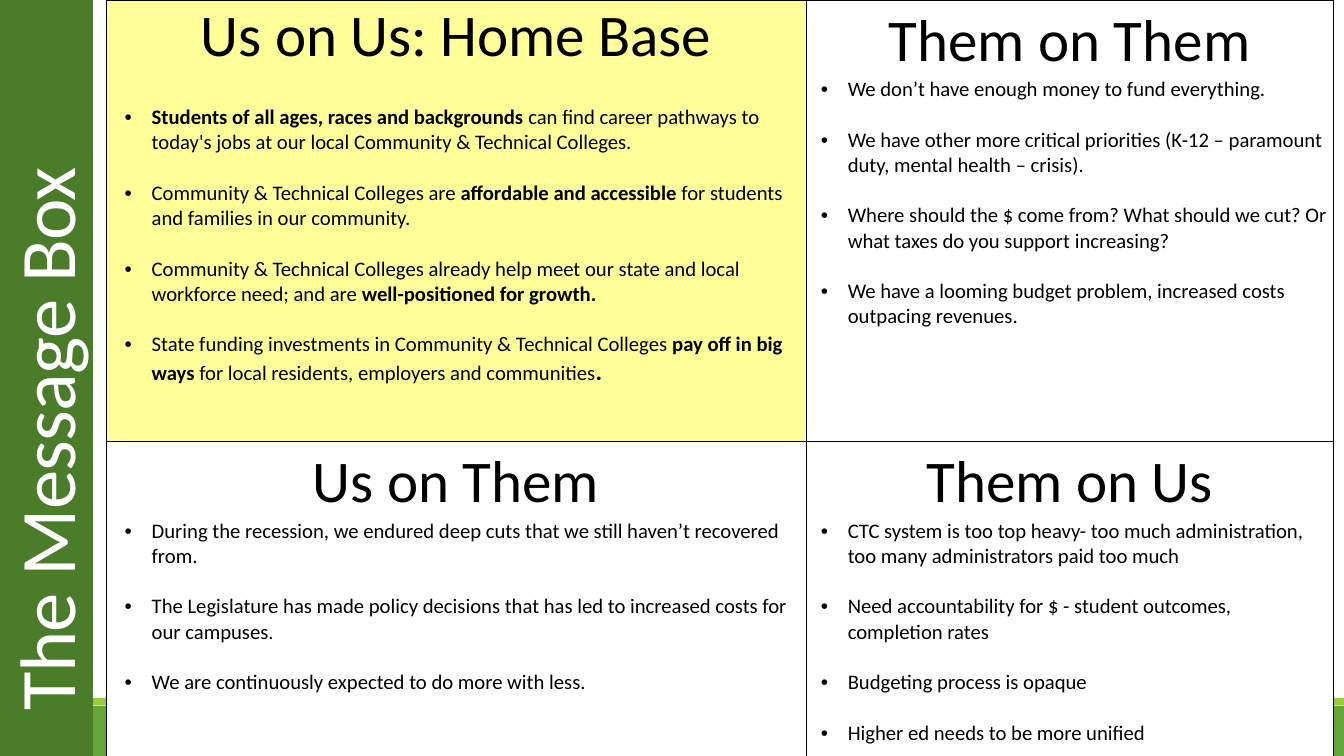
"""Build the Message Box slide."""
from dataclasses import dataclass

from lxml.etree import SubElement
from pptx import Presentation
from pptx.dml.color import RGBColor
from pptx.enum.shapes import MSO_SHAPE
from pptx.enum.text import MSO_ANCHOR, PP_ALIGN
from pptx.oxml import parse_xml
from pptx.oxml.ns import qn
from pptx.util import Inches, Pt

WIDE, HIGH = 18.96, 10.67
FONT = "Calibri"
BLACK, WHITE = "000000", "FFFFFF"
COLS, ROWS = (9.87, 7.44), (6.23, 4.44)
MARGINS = (0.56, 0.51)
SPACE = "http://schemas.openxmlformats.org/drawingml/2006/main"


@dataclass
class Bar:
    """A plain filled strip."""
    left: float
    top: float
    width: float
    height: float
    color: str


@dataclass
class Part:
    """A piece of text in one style."""
    text: str
    bold: bool = False
    size: float = 21


@dataclass
class Panel:
    """One cell of the message box."""
    title: str
    points: list[list[Part]]
    fill: str = WHITE
    lines: float = 1.07
    after: float = 0


BARS = [
    Bar(0, 9.96, WIDE, 0.71, "63A537"),
    Bar(0, 9.85, WIDE, 0.1, "99CB38"),
]
SIDE = Bar(0, 0, 1.31, HIGH, "4A7C29")

PANELS = [
    [
        Panel("Us on Us: Home Base", [
            [Part("Students of all ages, races and backgrounds", True),
             Part(" can find career pathways to today's jobs at our local "
                  "Community & Technical Colleges.")],
            [Part("Community & Technical Colleges are "),
             Part("affordable and accessible", True),
             Part(" for students and families in our community.")],
            [Part("Community & Technical Colleges already help meet our state "
                  "and local workforce need; and are "),
             Part("well-positioned for growth.", True)],
            [Part("State funding investments in Community & Technical Colleges "),
             Part("pay off in big ways", True),
             Part(" for local residents, employers and communities"),
             Part(".", True, 25)],
        ], "FFFF99", 1, 33.5),
        Panel("Them on Them", [
            [Part("We don’t have enough money to fund everything.")],
            [Part("We have other more critical priorities (K-12 – paramount "
                  "duty, mental health – crisis).")],
            [Part("Where should the $ come from? What should we cut? Or what "
                  "taxes do you support increasing?")],
            [Part("We have a looming budget problem, increased costs "
                  "outpacing revenues.")],
        ]),
    ],
    [
        Panel("Us on Them", [
            [Part("During the recession, we endured deep cuts that we still "
                  "haven’t recovered from.")],
            [Part("The Legislature has made policy decisions that has led to "
                  "increased costs for our campuses.")],
            [Part("We are continuously expected to do more with less.")],
        ]),
        Panel("Them on Us", [
            [Part("CTC system is too top heavy- too much administration, too "
                  "many administrators paid too much")],
            [Part("Need accountability for $ - student outcomes, "
                  "completion rates")],
            [Part("Budgeting process is opaque")],
            [Part("Higher ed needs to be more unified")],
        ]),
    ],
]


def paint(item, color: str) -> None:
    """Give a fill or line fill a solid colour."""
    item.solid()
    item.fore_color.rgb = RGBColor.from_string(color)


def add_bar(slide, bar: Bar) -> None:
    """Draw a strip without outline or shadow."""
    shape = slide.shapes.add_shape(
        MSO_SHAPE.RECTANGLE, Inches(bar.left), Inches(bar.top),
        Inches(bar.width), Inches(bar.height))
    paint(shape.fill, bar.color)
    shape.line.fill.background()
    shape.shadow.inherit = False


def add_part(para, part: Part, color: str = BLACK):
    """Add one run and return it."""
    run = para.add_run()
    run.text = part.text
    font = run.font
    font.name, font.size, font.bold = FONT, Pt(part.size), part.bold
    paint(font.fill, color)
    return run


def add_edges(cell) -> None:
    """Draw a thin black border round a cell."""
    props = cell._tc.get_or_add_tcPr()
    for side in ("lnL", "lnR", "lnT", "lnB"):
        edge = SubElement(props, qn(f"a:{side}"), w=str(Pt(1)))
        fill = SubElement(edge, qn("a:solidFill"))
        SubElement(fill, qn("a:srgbClr"), val=BLACK)


def fill_cell(cell, panel: Panel, margin: float) -> None:
    """Write the title and points of a panel."""
    add_edges(cell)
    paint(cell.fill, panel.fill)
    cell.margin_left = cell.margin_right = Inches(0.08)
    cell.margin_top = cell.margin_bottom = 0
    frame = cell.text_frame
    head = frame.paragraphs[0]
    head.alignment = PP_ALIGN.CENTER
    head.line_spacing = panel.lines
    head.space_after = Pt(panel.after)
    add_part(head, Part(panel.title, size=60))
    for index, point in enumerate(panel.points):
        para = frame.add_paragraph()
        para.space_before = Pt(25.6 if index else 0)
        props = para._p.get_or_add_pPr()
        props.set("marL", str(Inches(margin)))
        props.set("indent", str(Inches(-0.38)))
        SubElement(props, qn("a:buFont"), typeface="Arial")
        SubElement(props, qn("a:buChar"), char="•")
        for part in point:
            add_part(para, part)


def add_grid(slide) -> None:
    """Draw the two by two message table."""
    table = slide.shapes.add_table(
        len(ROWS), len(COLS), Inches(1.5), 0,
        Inches(sum(COLS)), Inches(sum(ROWS))).table
    table.first_row = table.horz_banding = False
    for col, width in zip(table.columns, COLS):
        col.width = Inches(width)
    for row, height, panels in zip(table.rows, ROWS, PANELS):
        row.height = Inches(height)
        for cell, panel, margin in zip(row.cells, panels, MARGINS):
            fill_cell(cell, panel, margin)


def add_name(slide) -> None:
    """Write the upright slide title with its text shadow."""
    box = slide.shapes.add_textbox(
        Inches(-3.48), Inches(4.91), Inches(8.27), Inches(2.16))
    box.rotation = 270
    frame = box.text_frame
    frame.word_wrap = True
    frame.vertical_anchor = MSO_ANCHOR.MIDDLE
    para = frame.paragraphs[0]
    para.line_spacing = Pt(92)
    run = add_part(para, Part("The Message Box", size=80), WHITE)
    props = run._r.get_or_add_rPr()
    props.set("spc", "-70")
    shade = parse_xml(
        f'<a:effectLst xmlns:a="{SPACE}"><a:outerShdw blurRad="38100" '
        'dist="38100" dir="2700000"><a:srgbClr val="000000"/>'
        '</a:outerShdw></a:effectLst>')
    props.find(qn("a:solidFill")).addnext(shade)


def main() -> None:
    """Build and save the deck."""
    deck = Presentation()
    deck.slide_width, deck.slide_height = Inches(WIDE), Inches(HIGH)
    slide = deck.slides.add_slide(deck.slide_layouts[6])
    paint(slide.background.fill, WHITE)
    for bar in BARS:
        add_bar(slide, bar)
    add_grid(slide)
    add_bar(slide, SIDE)
    add_name(slide)
    deck.save("out.pptx")


if __name__ == "__main__":
    main()
